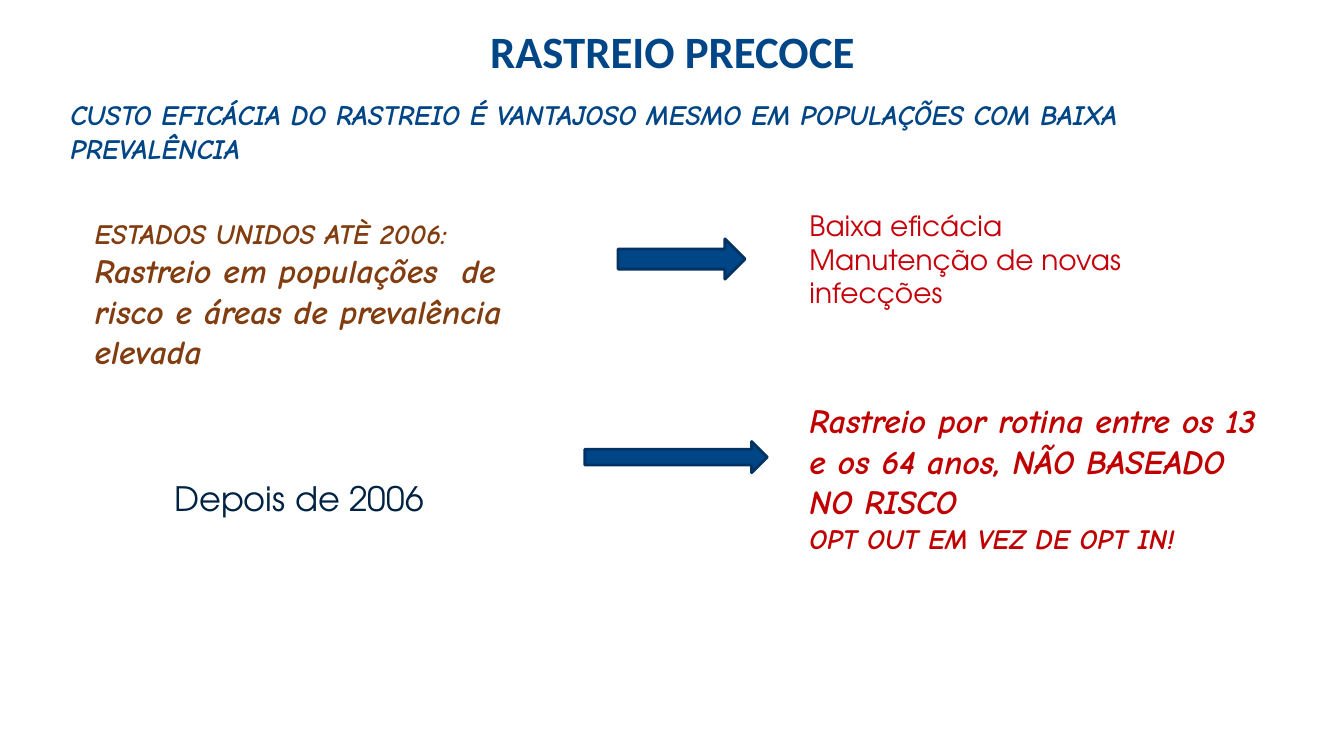
"""Build the slide on early screening."""
from pptx import Presentation
from pptx.dml.color import RGBColor
from pptx.enum.shapes import MSO_SHAPE
from pptx.enum.text import MSO_ANCHOR, PP_ALIGN
from pptx.util import Inches, Pt

BLUE = RGBColor(0x00, 0x45, 0x86)
NAVY = RGBColor(0x00, 0x33, 0x63)
INK = RGBColor(0x00, 0x22, 0x43)
BROWN = RGBColor(0x81, 0x3C, 0x0F)
CRIMSON = RGBColor(0xC5, 0x00, 0x0B)
RED = RGBColor(0xC0, 0x00, 0x00)
COMIC = "Comic Neue"
GYRE = "TeX Gyre Adventor"

deck = Presentation()
deck.slide_width, deck.slide_height = Inches(13.33), Inches(7.5)
slide = deck.slides.add_slide(deck.slide_layouts[6])


def add_text(area, lines, face, color, bold=False, italic=False):
    box = slide.shapes.add_textbox(*map(Inches, area))
    frame = box.text_frame
    frame.word_wrap = True
    frame.text = "\n".join(text for text, size in lines)
    for para, (text, size) in zip(frame.paragraphs, lines):
        font = para.runs[0].font
        font.name, font.size = face, Pt(size)
        font.bold, font.italic = bold, italic
        font.color.rgb = color
    return frame


title = add_text((0.67, 0.17, 12, 0.66), [("RASTREIO PRECOCE", 32)],
                 "Calibri", BLUE, bold=True)
title.vertical_anchor = MSO_ANCHOR.MIDDLE
title.paragraphs[0].alignment = PP_ALIGN.CENTER

add_text((0.6, 0.92, 11.97, 0.91),
         [("CUSTO EFICÁCIA DO RASTREIO É VANTAJOSO MESMO EM POPULAÇÕES "
           "COM BAIXA PREVALÊNCIA", 20)], COMIC, BLUE, True, True)
add_text((0.84, 2.1, 4.96, 1.65),
         [("ESTADOS UNIDOS ATÈ 2006:", 20),
          ("Rastreio em populações  de risco e áreas de prevalência elevada", 24)],
         COMIC, BROWN, True, True)
add_text((7.93, 2.02, 3.6, 1.11),
         [("Baixa eficácia", 20), ("Manutenção de novas infecções", 20)],
         GYRE, CRIMSON)
after = add_text((1.63, 4.69, 2.7, 0.5), [("Depois de 2006", 24)], GYRE, INK)
after.word_wrap = False
add_text((7.93, 3.92, 4.83, 2.05),
         [("Rastreio por rotina entre os 13 e os 64 anos, NÃO BASEADO NO RISCO", 24),
          ("OPT OUT EM VEZ DE OPT IN!", 20)], COMIC, RED, True, True)

for area in ((6.13, 2.37, 1.26, 0.4), (5.8, 4.38, 1.81, 0.31)):
    arrow = slide.shapes.add_shape(MSO_SHAPE.RIGHT_ARROW, *map(Inches, area))
    arrow.shadow.inherit = False
    arrow.fill.solid()
    arrow.fill.fore_color.rgb = BLUE
    arrow.line.color.rgb = NAVY
    arrow.line.width = Pt(2)

deck.save("out.pptx")
